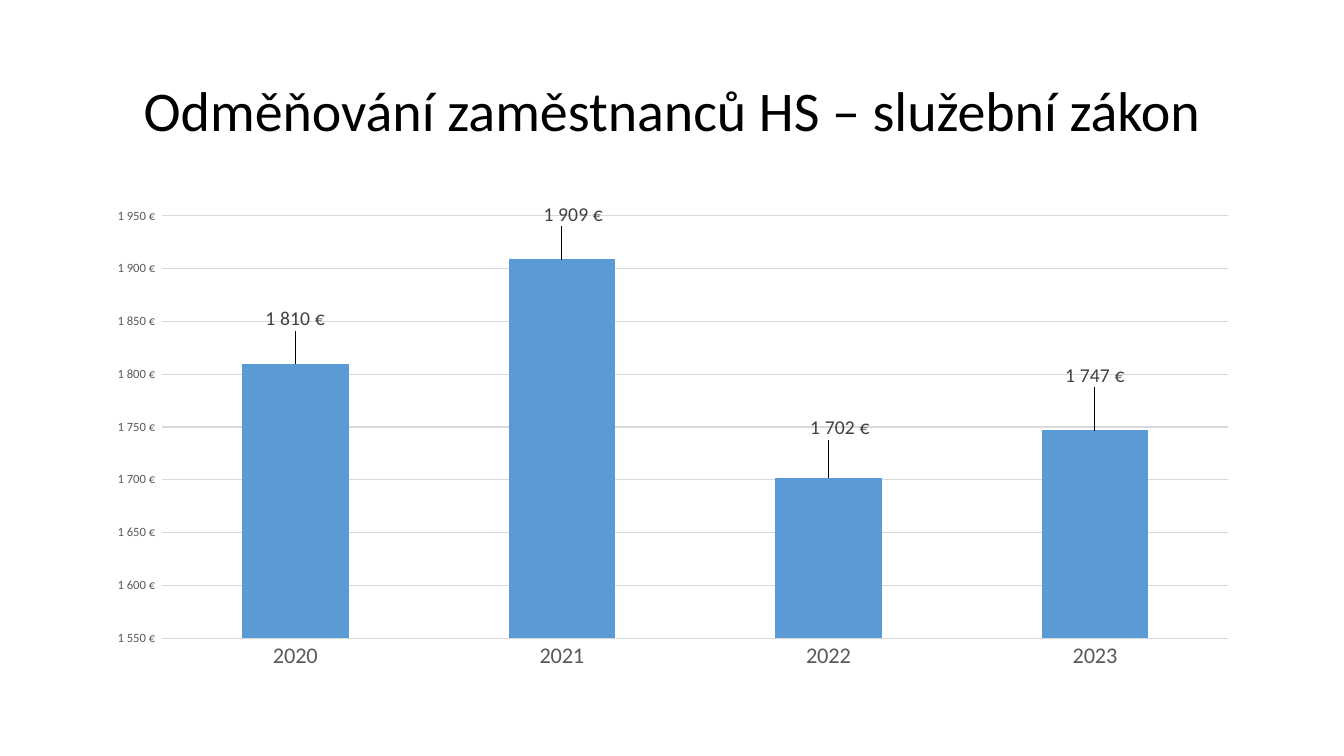
from dataclasses import dataclass

from lxml.etree import SubElement
from pptx import Presentation
from pptx.chart.data import CategoryChartData
from pptx.dml.color import RGBColor
from pptx.enum.chart import XL_CHART_TYPE, XL_LABEL_POSITION, XL_TICK_MARK
from pptx.enum.text import MSO_ANCHOR, PP_ALIGN
from pptx.oxml import parse_xml
from pptx.oxml.ns import nsdecls, qn
from pptx.util import Cm, Pt


@dataclass(frozen=True)
class Theme:
    """Fonts, colours and type sizes of the slide."""

    font: str = "Calibri"
    title_color: str = "000000"
    axis_color: str = "595959"
    label_color: str = "404040"
    grid_color: str = "D9D9D9"
    bar_color: str = "5B9BD5"
    title_size: int = 40
    chart_size: int = 10
    category_size: int = 16
    value_size: int = 9
    label_size: int = 14


EURO_FORMAT = r"_-* #\ ##0\ [$€-1]_-"
SALARIES = {"2020": 1810, "2021": 1909, "2022": 1702, "2023": 1747}
LABEL_SHIFTS = [(0, -0.06), (0.01, -0.06), (0.01, -0.07), (0, -0.08)]
PLOT_FRAME = {"x": 0.06, "y": 0.03, "w": 0.92, "h": 0.88}


def manual_layout(lengths, inner=False):
    """Return a chart layout element with the given fractions."""
    layout = parse_xml(f"<c:layout {nsdecls('c')}><c:manualLayout/></c:layout>")
    settings = {"layoutTarget": "inner", "xMode": "edge", "yMode": "edge"} if inner else {}
    for name, value in {**settings, **lengths}.items():
        SubElement(layout[0], qn(f"c:{name}")).set("val", str(value))
    return layout


class SlideBuilder:
    """Adds styled elements to the current slide."""

    def __init__(self, page, theme):
        """Keep the slide and its theme."""
        self.page = page
        self.theme = theme

    def style(self, font, size, color):
        """Apply the theme typeface with a size and colour."""
        font.name = self.theme.font
        font.size = Pt(size)
        font.bold = False
        font.color.rgb = RGBColor.from_string(color)

    def title(self, text, left, top, width, height):
        """Add the centred slide title."""
        box = self.page.shapes.add_textbox(Cm(left), Cm(top), Cm(width), Cm(height))
        frame = box.text_frame
        frame.word_wrap = True
        frame.vertical_anchor = MSO_ANCHOR.MIDDLE
        frame.text = text
        para = frame.paragraphs[0]
        para.alignment = PP_ALIGN.CENTER
        para.line_spacing = 0.9
        self.style(para.runs[0].font, self.theme.title_size, self.theme.title_color)

    def axis(self, axis, size):
        """Style an axis without line or tick marks."""
        axis.major_tick_mark = axis.minor_tick_mark = XL_TICK_MARK.NONE
        axis.format.line.fill.background()
        self.style(axis.tick_labels.font, size, self.theme.axis_color)

    def value_axis(self, axis, low, high, step):
        """Set the scale, number format and gridlines."""
        self.axis(axis, self.theme.value_size)
        axis.minimum_scale, axis.maximum_scale, axis.major_unit = low, high, step
        axis.tick_labels.number_format = EURO_FORMAT
        axis.tick_labels.number_format_is_linked = False
        grid = axis.major_gridlines.format.line
        grid.width = Pt(0.75)
        grid.color.rgb = RGBColor.from_string(self.theme.grid_color)

    def labels(self, series, shifts):
        """Show the values, each shifted from its bar end."""
        labels = series.data_labels
        labels.show_value = True
        labels.number_format = EURO_FORMAT
        labels.number_format_is_linked = False
        self.style(labels.font, self.theme.label_size, self.theme.label_color)
        for index, (across, down) in enumerate(shifts):
            label = series.points[index].data_label
            label.position = XL_LABEL_POSITION.OUTSIDE_END
            self.style(label.font, self.theme.label_size, self.theme.label_color)
        for element, (across, down) in zip(labels._element.findall(qn("c:dLbl")), shifts):
            element.insert(1, manual_layout({"x": across, "y": down}))

    def column_chart(self, name, values, left, top, width, height):
        """Add the column chart."""
        data = CategoryChartData(number_format=EURO_FORMAT)
        data.categories = list(values)
        data.add_series(name, list(values.values()))
        chart = self.page.shapes.add_chart(
            XL_CHART_TYPE.COLUMN_CLUSTERED, Cm(left), Cm(top), Cm(width), Cm(height), data
        ).chart
        chart.has_legend = chart.has_title = False
        self.style(chart.font, self.theme.chart_size, self.theme.title_color)
        self.axis(chart.category_axis, self.theme.category_size)
        self.value_axis(chart.value_axis, 1550, 1950, 50)
        plot = chart.plots[0]
        plot.gap_width = 150
        plot.vary_by_categories = False
        series = plot.series[0]
        series.format.fill.solid()
        series.format.fill.fore_color.rgb = RGBColor.from_string(self.theme.bar_color)
        self.labels(series, LABEL_SHIFTS)
        area = chart._chartSpace.chart.plotArea
        for layout in area.findall(qn("c:layout")):
            area.remove(layout)
        area.insert(0, manual_layout(PLOT_FRAME, inner=True))


def main():
    """Build and save the deck."""
    deck = Presentation()
    deck.slide_width, deck.slide_height = Cm(33.87), Cm(19.05)
    builder = SlideBuilder(deck.slides.add_slide(deck.slide_layouts[6]), Theme())
    builder.title("Odměňování zaměstnanců HS – služební zákon", 2.33, 1.02, 29.21, 3.68)
    builder.column_chart("Series 1", SALARIES, 2.33, 5.08, 29.21, 12.09)
    deck.save("out.pptx")


if __name__ == "__main__":
    main()
